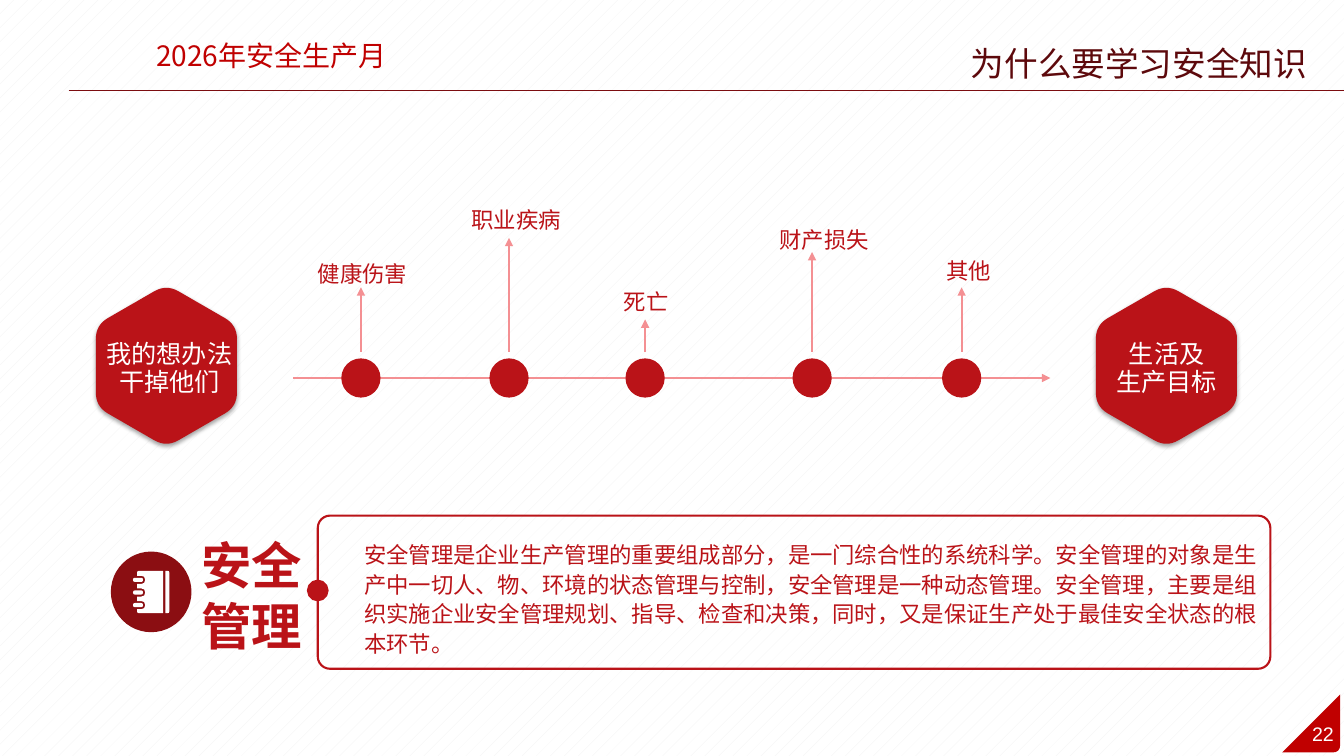
from dataclasses import dataclass
from math import cos, dist, radians, sin

from lxml import etree
from pptx import Presentation
from pptx import util as u
from pptx.dml.color import RGBColor
from pptx.enum import dml, shapes, text
from pptx.oxml import ns

Kind = shapes.MSO_SHAPE
Align = text.PP_ALIGN


@dataclass(frozen=True)
class Theme:
    red: str = "BA1318"
    banner: str = "C00000"
    maroon: str = "8B0E12"
    rule: str = "7C0D10"
    heading: str = "5D090C"
    pink: str = "F49093"
    white: str = "FFFFFF"
    dots: str = "F2F2F2"
    font: str = "Noto Sans CJK SC"
    number_font: str = "Arial"
    number: int = 14
    body: int = 16
    goal: int = 18
    event: int = 20
    title: int = 24
    topic: int = 36


def between(start, end, share):
    return tuple(a + (b - a) * share for a, b in zip(start, end))


def rounded(corners):
    nodes = []
    for i, (x, y, cut) in enumerate(corners):
        tip = (x, y)
        if not cut:
            nodes.append((tip, "line", ()))
            continue
        before, after = corners[i - 1][:2], corners[(i + 1) % len(corners)][:2]
        enter = between(tip, before, cut / dist(tip, before))
        leave = between(tip, after, cut / dist(tip, after))
        crest = between(between(enter, leave, 0.5), tip, 0.5)
        controls = (between(enter, tip, 2 / 3), between(leave, tip, 2 / 3))
        nodes += [(enter, "line", ()), (crest, "crest", ()), (leave, "curve", controls)]
    return nodes


class Painter:
    def __init__(self, slide, theme):
        self.slide = slide
        self.theme = theme

    def background(self):
        fill = self.slide.background.fill
        fill.patterned()
        fill.pattern = dml.MSO_PATTERN.PERCENT_5
        fill.fore_color.rgb = RGBColor.from_string(self.theme.dots)
        fill.back_color.rgb = RGBColor.from_string(self.theme.white)

    def paint(self, shape, fill=None, line=None, weight=0):
        shape.shadow.inherit = False
        if fill:
            shape.fill.solid()
            shape.fill.fore_color.rgb = RGBColor.from_string(fill)
        else:
            shape.fill.background()
        if line:
            shape.line.color.rgb = RGBColor.from_string(line)
            shape.line.width = u.Pt(weight)
        else:
            shape.line.fill.background()
        return shape

    def shape(self, kind, left, top, width, height, **style):
        shape = self.slide.shapes.add_shape(
            kind, u.Pt(left), u.Pt(top), u.Pt(width), u.Pt(height))
        return self.paint(shape, **style)

    def dot(self, x, y, size):
        self.shape(Kind.FLOWCHART_CONNECTOR, x - size / 2, y - size / 2, size, size,
                   fill=self.theme.red, line=self.theme.red, weight=2)

    def outline(self, contours, fill):
        nodes, builder = [], None
        for corners in contours:
            contour = rounded(corners)
            nodes += contour
            start, *rest = [(u.Pt(x), u.Pt(y)) for (x, y), _, _ in contour]
            if builder is None:
                builder = self.slide.shapes.build_freeform(*start)
            else:
                builder.move_to(*start)
            builder.add_line_segments(rest, close=True)
        shape = builder.convert_to_shape()
        route = next(shape._element.iter(ns.qn("a:path")))
        steps = [step for step in route if step.tag != ns.qn("a:close")]
        for step, (_, role, controls) in zip(steps, nodes):
            if role == "crest":
                route.remove(step)
            elif role == "curve":
                curve = etree.Element(ns.qn("a:cubicBezTo"))
                for x, y in controls:
                    etree.SubElement(curve, ns.qn("a:pt"), x=str(u.Pt(x) - shape.left),
                                     y=str(u.Pt(y) - shape.top))
                curve.append(step[0])
                route.replace(step, curve)
        return self.paint(shape, fill=fill)

    def line(self, x1, y1, x2, y2, color, weight, arrow=False):
        line = self.slide.shapes.add_connector(
            shapes.MSO_CONNECTOR.STRAIGHT, u.Pt(x1), u.Pt(y1), u.Pt(x2), u.Pt(y2))
        line.line.color.rgb = RGBColor.from_string(color)
        line.line.width = u.Pt(weight)
        props = line._element.spPr
        if arrow:
            etree.SubElement(props.find(ns.qn("a:ln")), ns.qn("a:headEnd"), type="triangle")
        etree.SubElement(props, ns.qn("a:effectLst"))

    def text(self, words, left, top, width, height, size, color, align=Align.LEFT,
             spacing=None, font=None, bold=False, anchor=text.MSO_ANCHOR.TOP, wrap=True,
             inset=7.2):
        box = self.slide.shapes.add_textbox(
            u.Pt(left), u.Pt(top), u.Pt(width), u.Pt(height))
        frame = box.text_frame
        frame.word_wrap = wrap
        frame.vertical_anchor = anchor
        frame.margin_left = frame.margin_right = u.Pt(inset)
        frame.margin_top = frame.margin_bottom = u.Pt(inset / 2)
        frame.text = words
        for paragraph in frame.paragraphs:
            paragraph.alignment = align
            if spacing:
                paragraph.line_spacing = spacing
            paragraph.font.size = u.Pt(size)
            paragraph.font.bold = bold
            paragraph.font.color.rgb = RGBColor.from_string(color)
            paragraph.font.name = font or self.theme.font
            etree.SubElement(paragraph._p.pPr.find(ns.qn("a:defRPr")), ns.qn("a:ea"),
                             typeface=font or self.theme.font)

    def hexagon(self, words, x, y, text_x):
        corners = [(x + 58.2 * cos(radians(a)), y + 58.2 * sin(radians(a)), 10)
                   for a in range(30, 390, 60)]
        badge = self.outline([corners], self.theme.red)
        effects = badge._element.spPr.find(ns.qn("a:effectLst"))
        shadow = etree.SubElement(
            effects, ns.qn("a:outerShdw"), blurRad=str(u.Pt(3.1)), dist=str(u.Pt(1.8)),
            dir="5400000", algn="t", rotWithShape="0")
        black = etree.SubElement(shadow, ns.qn("a:srgbClr"), val="000000")
        etree.SubElement(black, ns.qn("a:alpha"), val="35000")
        self.text(words, text_x - 106, 239, 212, 49.5, self.theme.goal, self.theme.white,
                  Align.CENTER, u.Pt(20), inset=8.64)

    def notebook(self):
        self.shape(Kind.OVAL, 79.2, 394, 57.6, 57.6, fill=self.theme.maroon)
        top, bottom, spine = 407.7, 438, 97.9
        ring_rows = [414.2 + 9 * i for i in range(3)]
        back = [(118.1, top, 0), (121, top, 1.4), (121, bottom, 1.4), (118.1, bottom, 0)]
        cover = [(spine, top, 1.4), (116.6, top, 0), (116.6, bottom, 0), (spine, bottom, 1.4)]
        for y in reversed(ring_rows):
            cover += [(spine, y + 2.9, 0), (103.7, y + 2.9, 2.8),
                      (103.7, y - 2.9, 2.8), (spine, y - 2.9, 0)]
        rings = [[(95, y - 1.5, 1.4), (102.2, y - 1.5, 1.4),
                  (102.2, y + 1.5, 1.4), (95, y + 1.5, 1.4)] for y in ring_rows]
        self.outline([back, cover, *rings], self.theme.white)


HAZARDS = [
    ("健康伤害", 257.8, 205.2, 220, 180),
    ("职业疾病", 363.6, 169.9, 329.8, 141.8),
    ("死亡", 460.8, 228.2, 438.5, 200.2),
    ("财产损失", 580.1, 180, 549.7, 155.9),
    ("其他", 686.9, 205.2, 668.9, 178.1),
]
SUMMARY = (
    "安全管理是企业生产管理的重要组成部分，是一门综合性的系统科学。"
    "安全管理的对象是生产中一切人、物、环境的状态管理与控制，安全管理是一种动态管理。"
    "安全管理，主要是组织实施企业安全管理规划、指导、检查和决策，"
    "同时，又是保证生产处于最佳安全状态的根本环节。"
)


def main():
    deck = Presentation()
    deck.slide_width, deck.slide_height = u.Pt(960), u.Pt(540)
    theme = Theme()
    page = Painter(deck.slides.add_slide(deck.slide_layouts[6]), theme)

    page.background()
    page.line(49, 64.4, 960, 64.4, theme.rule, 0.75)
    page.outline([[(957.3, 496, 0), (957.3, 537.5, 5.5), (915.8, 537.5, 0)]], theme.banner)
    page.text("22", 929.5, 512, 31, 24.5, theme.number, theme.white, Align.CENTER,
              font=theme.number_font, wrap=False)
    page.text("2026年安全生产月", 70.3, 23.8, 247, 31.7, theme.event, theme.banner, Align.CENTER)
    page.text("为什么要学习安全知识", 667, 27.4, 293, 36, theme.title, theme.heading,
              Align.CENTER)

    page.notebook()
    panel = page.shape(Kind.ROUNDED_RECTANGLE, 227, 368.3, 680.4, 109.4,
                       line=theme.red, weight=1.5)
    panel.adjustments[0] = 0.08
    page.dot(227, 421.8, 13.5)
    page.text("安全\n管理", 136.8, 379.9, 86.4, 90, theme.topic, theme.red, bold=True,
              anchor=text.MSO_ANCHOR.MIDDLE)
    page.text(SUMMARY, 253, 381.2, 655.2, 91.4, theme.body, theme.red, spacing=1.1)

    page.hexagon("我的想办法\n干掉他们", 118.9, 261.3, 121)
    page.hexagon("生活及\n生产目标", 833.2, 261.3, 833.4)

    page.line(750.2, 270, 209.5, 270, theme.pink, 1.5, arrow=True)
    for hazard, x, tip, label_left, label_top in HAZARDS:
        page.dot(x, 270, 26)
        page.line(x, tip, x, 251.3, theme.pink, 1.5, arrow=True)
        page.text(hazard, label_left, label_top, 93.6, 27.4, theme.body, theme.red, spacing=1.1)

    deck.save("out.pptx")


if __name__ == "__main__":
    main()
